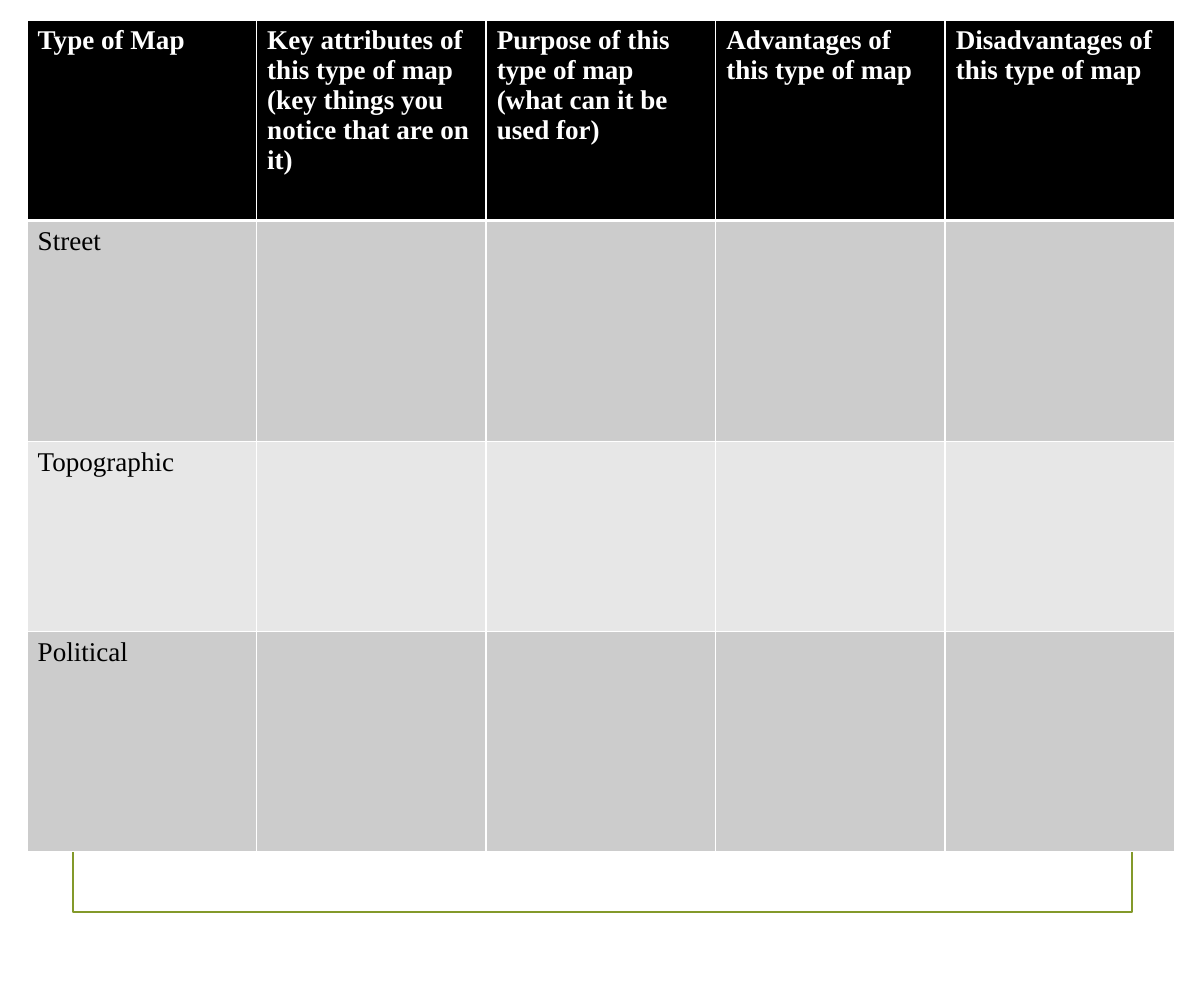
from lxml import etree
from pptx import Presentation
from pptx import util as u
from pptx.dml.color import RGBColor
from pptx.enum import shapes
from pptx.oxml import ns

BLACK = RGBColor(0, 0, 0)
WHITE = RGBColor(0xFF, 0xFF, 0xFF)
OLIVE = RGBColor(0x83, 0x99, 0x2A)
DARK = RGBColor(0xCC, 0xCC, 0xCC)
LIGHT = RGBColor(0xE7, 0xE7, 0xE7)

HEADS = [
    "Type of Map",
    "Key attributes of this type of map (key things you notice that are on it)",
    "Purpose of this type of map (what can it be used for)",
    "Advantages of this type of map",
    "Disadvantages of this type of map",
]
MAPS = ["Street", "Topographic", "Political"]
TALL = [4.7, 5.18, 4.46, 5.16]


class Page:
    font = {"name": "Times New Roman", "size": u.Pt(18)}

    def __init__(self, deck):
        self.slide = deck.slides.add_slide(deck.slide_layouts[6])

    def frame(self, *box):
        rect = self.slide.shapes.add_shape(
            shapes.MSO_SHAPE.RECTANGLE, *map(u.Cm, box))
        rect.shadow.inherit = False
        rect.fill.background()
        rect.line.color.rgb = OLIVE
        rect.line.width = u.Pt(1.25)

    def edge(self, cell, side, width):
        props = cell._tc.get_or_add_tcPr()
        line = etree.SubElement(props, ns.qn("a:ln" + side), w=str(u.Pt(width)))
        fill = etree.SubElement(line, ns.qn("a:solidFill"))
        etree.SubElement(fill, ns.qn("a:srgbClr"), val=str(WHITE))

    def cell(self, cell, words, fill, top, base, color, **style):
        for side, width in {"L": 1, "R": 1, "T": top, "B": base}.items():
            self.edge(cell, side, width)
        cell.fill.solid()
        cell.fill.fore_color.rgb = fill
        cell.text = words
        font = cell.text_frame.paragraphs[0].font
        for key, value in {**self.font, **style}.items():
            setattr(font, key, value)
        font.color.rgb = color

    def table(self, left, top, wide, tall, rows):
        size = (left, top, wide * len(rows[0]), sum(tall))
        grid = self.slide.shapes.add_table(
            len(rows), len(rows[0]), *map(u.Cm, size)).table
        for col in grid.columns:
            col.width = u.Cm(wide)
        for r, row in enumerate(rows):
            grid.rows[r].height = u.Cm(tall[r])
            head = r == 0
            fill = BLACK if head else DARK if r % 2 else LIGHT
            for c, words in enumerate(row):
                self.cell(grid.cell(r, c), words, fill,
                          top=3 if r == 1 else 1, base=3 if head else 1,
                          color=WHITE if head else BLACK, bold=head)


def main():
    deck = Presentation()
    # Page of 800 by 660 points
    deck.slide_width, deck.slide_height = u.Pt(800), u.Pt(660)
    page = Page(deck)

    # Border behind the table
    page.frame(1.71, 1.85, 24.82, 19.53)

    # Worksheet with one row per map
    blank = [""] * (len(HEADS) - 1)
    page.table(0.63, 0.47, 5.38, TALL, [HEADS] + [[m] + blank for m in MAPS])

    deck.save("out.pptx")


if __name__ == "__main__":
    main()
